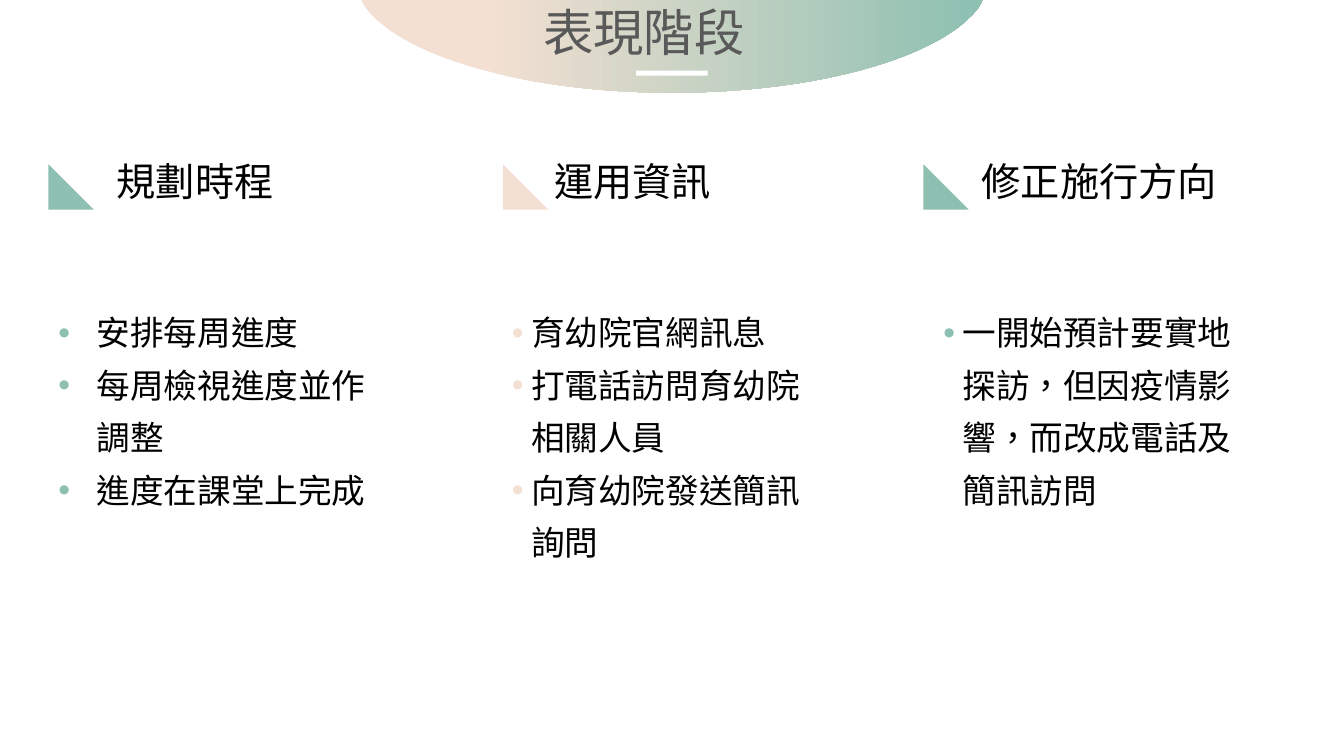
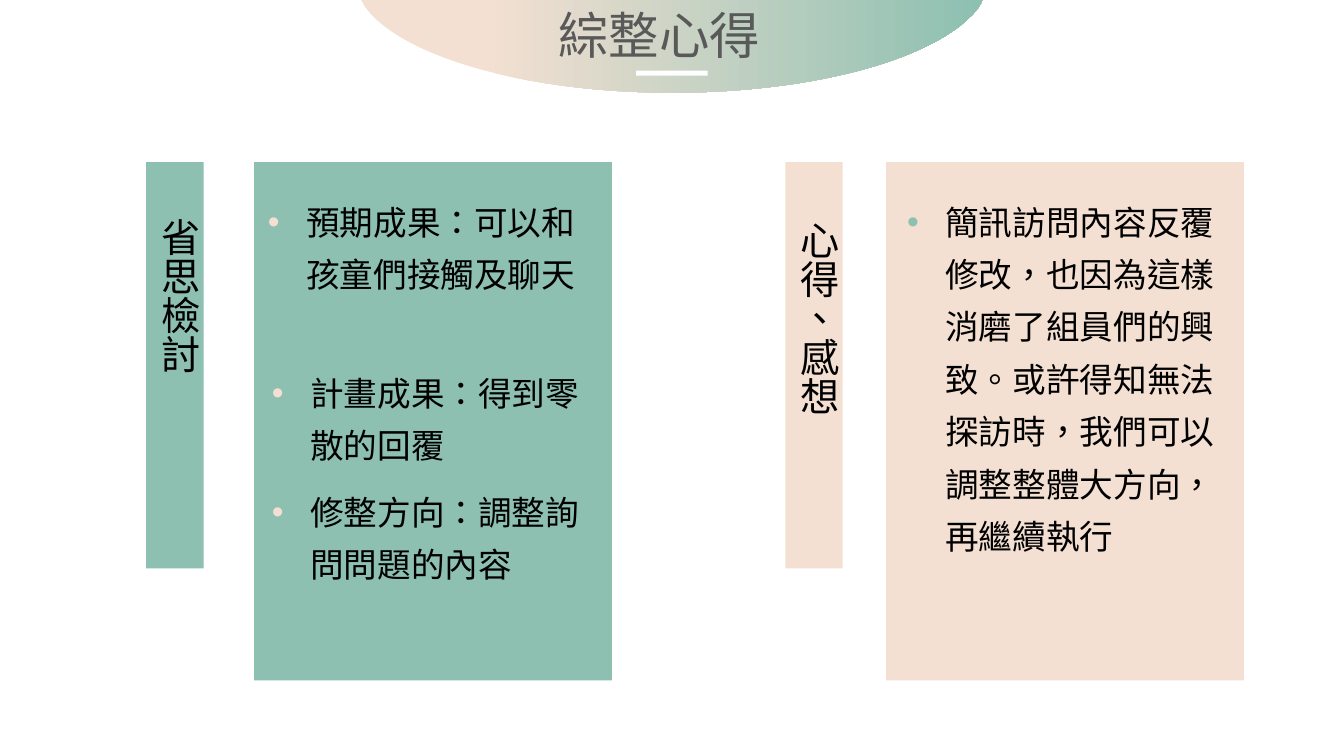
from lxml.etree import SubElement
from pptx import Presentation
from pptx.dml.color import RGBColor
from pptx.enum.shapes import MSO_SHAPE as Preset
from pptx.enum.text import MSO_AUTO_SIZE as AutoSize, PP_ALIGN as Align
from pptx.oxml.ns import qn
from pptx.util import Inches, Pt

SLIDE_WIDTH, SLIDE_HEIGHT = Inches(13.33), Inches(7.5)
COLUMNS, ROWS = 40, 22.5
FONT = "Noto Sans CJK SC"
GREEN, PEACH = "8DC0B1", "F3E0D2"
BLACK, GREY, WHITE = "000000", "595959", "FFFFFF"
TITLE_SIZE, HEADING_SIZE, BODY_SIZE = 36, 28, 24
WIDE_INDENT, NARROW_INDENT = 0.38, 0.19
CURVE_STEPS = 24


def color(hex_text):
    return RGBColor.from_string(hex_text)


def place(column, row):
    """Turn grid columns and rows into slide lengths."""
    return round(column * SLIDE_WIDTH / COLUMNS), round(row * SLIDE_HEIGHT / ROWS)


def add_preset(slide, preset, left, top, width, height, fill):
    shape = slide.shapes.add_shape(preset, *place(left, top), *place(width, height))
    shape.shadow.inherit = False
    shape.fill.solid()
    shape.fill.fore_color.rgb = color(fill)
    shape.line.fill.background()


def add_text(slide, left, top, width, height, lines, size, text_color=BLACK, align=Align.LEFT):
    box = slide.shapes.add_textbox(*place(left, top), *place(width, height))
    text_frame = box.text_frame
    text_frame.word_wrap = True
    text_frame.auto_size = AutoSize.SHAPE_TO_FIT_TEXT
    text_frame.text = "\n".join(lines)
    for paragraph in text_frame.paragraphs:
        paragraph.alignment = align
        for run in paragraph.runs:
            run.font.name = FONT
            run.font.size = Pt(size)
            run.font.color.rgb = color(text_color)
            properties = run._r.get_or_add_rPr()
            properties.set("lang", "zh-TW")
            SubElement(properties, qn("a:ea"), typeface=FONT)
    return text_frame


def add_bullets(slide, left, top, width, height, lines, bullet_color, indent=WIDE_INDENT):
    text_frame = add_text(slide, left, top, width, height, lines, BODY_SIZE)
    for paragraph in text_frame.paragraphs:
        paragraph.line_spacing = 1.3
        properties = paragraph._p.get_or_add_pPr()
        properties.set("marL", str(Inches(indent)))
        properties.set("indent", str(-Inches(indent)))
        bullet = SubElement(properties, qn("a:buClr"))
        SubElement(bullet, qn("a:srgbClr"), val=bullet_color)
        SubElement(properties, qn("a:buFont"), typeface="Arial")
        SubElement(properties, qn("a:buChar"), char="•")


def add_vertical_label(slide, left, top, text):
    text_frame = add_text(slide, left, top, 2.01, 8.43, [text], HEADING_SIZE, align=Align.JUSTIFY)
    text_frame._txBody.bodyPr.set("vert", "eaVert")


def curve_points(start, first, second, end):
    """Sample a cubic curve from start to end."""
    for step in range(1, CURVE_STEPS + 1):
        t = step / CURVE_STEPS
        weights = (1 - t) ** 3, 3 * t * (1 - t) ** 2, 3 * t * t * (1 - t), t ** 3
        yield tuple(sum(weight * point[axis] for weight, point
                        in zip(weights, (start, first, second, end))) for axis in (0, 1))


def add_dome(slide):
    """Hang the gradient half ellipse from the top edge."""
    middle, half, bottom = 20, 9.25, 2.76
    right_side = list(curve_points((middle + half, 0.03), (middle + 8.35, 1.59),
                                   (middle + 4.56, bottom), (middle, bottom)))
    left_side = [(2 * middle - x, y) for x, y in reversed(right_side[:-1])]
    outline = [(middle + half, 0), *right_side, *left_side]
    builder = slide.shapes.build_freeform(*place(middle - half, 0))
    builder.add_line_segments([place(*point) for point in outline], close=True)
    dome = builder.convert_to_shape()
    dome.shadow.inherit = False
    dome.line.fill.background()
    dome.fill.gradient()
    dome.fill.gradient_angle = 0
    for stop, position, hex_text in zip(dome.fill.gradient_stops, (0.2, 1), (PEACH, GREEN)):
        stop.position = position
        stop.color.rgb = color(hex_text)


def add_titled_slide(presentation, title, left, top):
    slide = presentation.slides.add_slide(presentation.slide_layouts[6])
    add_dome(slide)
    add_text(slide, left, top, 7.38, 2.13, [title], TITLE_SIZE, GREY, Align.JUSTIFY)
    add_preset(slide, Preset.RECTANGLE, 18.93, 2.1, 2.13, 0.15, WHITE)
    return slide


def build_performance(presentation):
    slide = add_titled_slide(presentation, "表現階段", 15.87, -0.12)
    # heading, heading width, triangle left, list left, list width, list height, indent, color, lines
    topics = [
        ("規劃時程", 8.73, 1.44, 1.44, 10.26, 6.45, WIDE_INDENT, GREEN,
         ["安排每周進度", "每周檢視進度並作調整", "進度在課堂上完成"]),
        ("運用資訊", 8.73, 14.97, 14.94, 9.9, 8.04, NARROW_INDENT, PEACH,
         ["育幼院官網訊息", "打電話訪問育幼院相關人員", "向育幼院發送簡訊詢問"]),
        ("修正施行方向", 10.47, 27.48, 27.78, 9.72, 6.45, NARROW_INDENT, GREEN,
         ["一開始預計要實地探訪，但因疫情影響，而改成電話及簡訊訪問"]),
    ]
    for index, topic in enumerate(topics):
        heading, heading_width, triangle_left, left, width, height, indent, accent, lines = topic
        add_text(slide, 1.44 + 13.02 * index, 4.53, heading_width, 1.71, [heading],
                 HEADING_SIZE, align=Align.CENTER)
        add_bullets(slide, left, 8.79, width, height, lines, accent, indent)
        add_preset(slide, Preset.RIGHT_TRIANGLE, triangle_left, 4.89, 1.35, 1.35, accent)


def build_reflection(presentation):
    slide = add_titled_slide(presentation, "綜整心得", 16.32, -0.03)
    # label, label left, label top, bar left, panel left, fill
    panels = [
        ("省思檢討", 4.2, 6.18, 4.35, 7.56, GREEN),
        ("心得、感想", 23.19, 6.27, 23.37, 26.37, PEACH),
    ]
    for label, label_left, label_top, bar_left, panel_left, fill in panels:
        add_preset(slide, Preset.RECTANGLE, bar_left, 4.83, 1.71, 12.09, fill)
        add_preset(slide, Preset.RECTANGLE, panel_left, 4.83, 10.65, 15.42, fill)
        add_vertical_label(slide, label_left, label_top, label)
    # left, top, width, height, text, bullet color
    notes = [
        (7.68, 5.49, 10.5, 3.3, "預期成果：可以和孩童們接觸及聊天", PEACH),
        (7.8, 10.59, 9.93, 3.45, "計畫成果：得到零散的回覆", PEACH),
        (7.8, 14.13, 9.93, 3.45, "修整方向：調整詢問問題的內容", PEACH),
        (26.7, 5.49, 9.93, 11.34, "簡訊訪問內容反覆修改，也因為這樣消磨了組員們的興致。"
         "或許得知無法探訪時，我們可以調整整體大方向，再繼續執行", GREEN),
    ]
    for left, top, width, height, text, bullet_color in notes:
        add_bullets(slide, left, top, width, height, [text], bullet_color)


def main():
    presentation = Presentation()
    presentation.slide_width, presentation.slide_height = SLIDE_WIDTH, SLIDE_HEIGHT
    build_performance(presentation)
    build_reflection(presentation)
    presentation.save("out.pptx")


if __name__ == "__main__":
    main()
